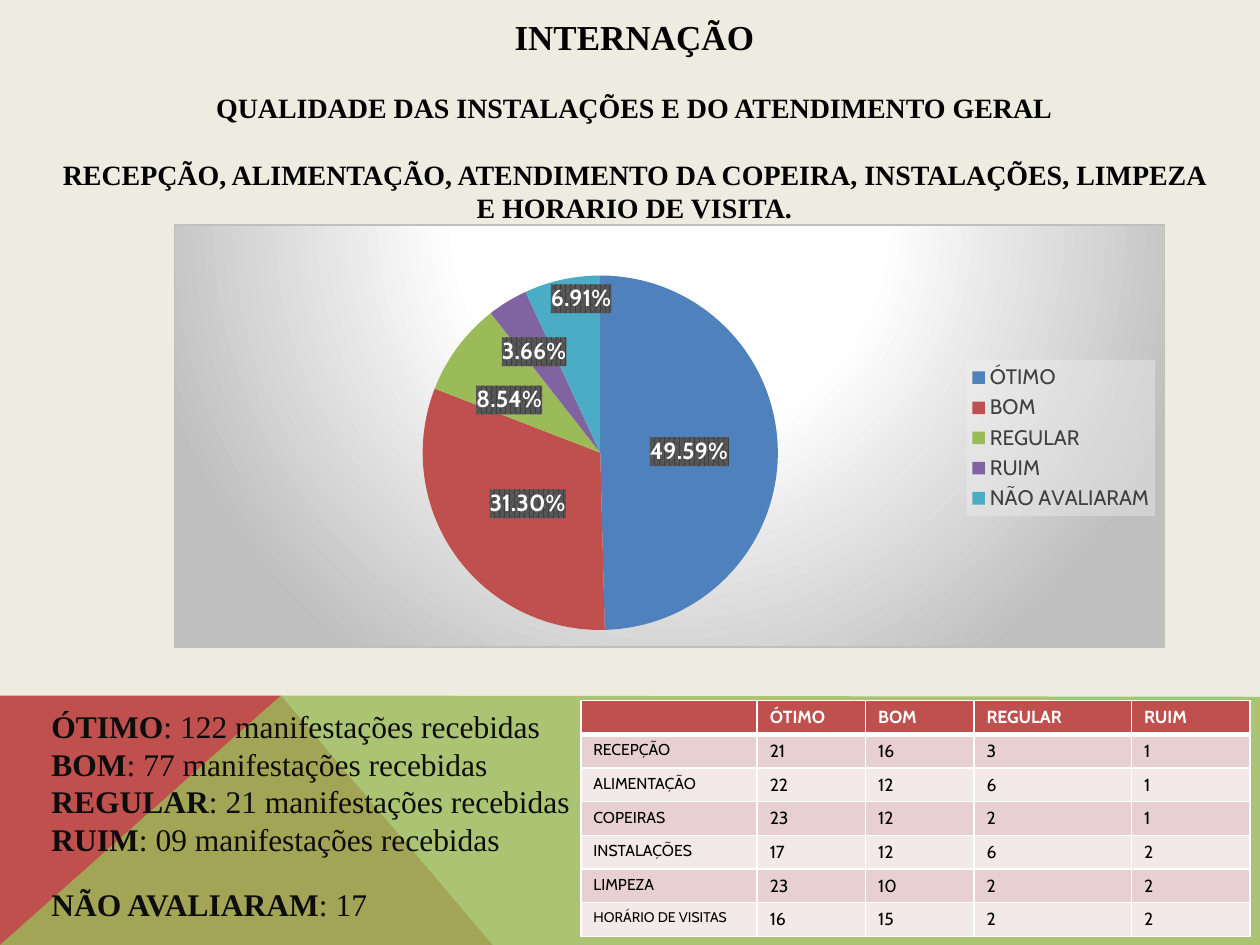
from copy import deepcopy
from dataclasses import dataclass

from pptx import Presentation, util as u
from pptx.chart.data import CategoryChartData
from pptx.dml.color import RGBColor
from pptx.enum import chart as ch, text as tx
from pptx.oxml import parse_xml
from pptx.oxml.ns import nsdecls, qn


@dataclass(frozen=True)
class Theme:
    back: str = "EEECE1"
    red: str = "C0504D"
    green: str = "9BBB59"
    black: str = "000000"
    ink: str = "0D0D0D"
    white: str = "FFFFFF"
    edge: str = "BFBFBF"
    key: str = "404040"
    pale: str = "F2F2F2"
    stripe: str = "595959"
    bands: tuple = ("F4E9E9", "E8D0D0")
    pie: tuple = ("4F81BD", "C0504D", "9BBB59", "8064A2", "4BACC6")
    serif: str = "Times New Roman"
    sans: str = "Cabin"
    title: float = 20
    head: float = 16
    body: float = 18
    cell: float = 10
    small: float = 9
    tiny: float = 8
    legend: float = 12
    label: float = 13.3


def tint(color, alpha=100):
    return f'<a:srgbClr val="{color}"><a:alpha val="{alpha * 1000}"/></a:srgbClr>'


def solid(color, alpha=100):
    return f"<a:solidFill>{tint(color, alpha)}</a:solidFill>"


def make(tag, inner):
    return parse_xml(f'<{tag} {nsdecls("a", "c")}>{inner}</{tag}>')


def layout(x, y, w=None, h=None, inner=False):
    parts = '<c:layoutTarget val="inner"/>' if inner else ""
    if w:
        parts += '<c:xMode val="edge"/><c:yMode val="edge"/>'
    for name, val in zip("xywh", (x, y, w, h)):
        if val is not None:
            parts += f'<c:{name} val="{val}"/>'
    return make("c:layout", f"<c:manualLayout>{parts}</c:manualLayout>")


class Deck:
    """Hold the style and the current slide, and draw each kind of element."""

    def __init__(self, theme):
        self.theme = theme
        self.file = Presentation()
        self.file.slide_width, self.file.slide_height = u.Inches(10), u.Inches(7.5)
        self.slide = self.file.slides.add_slide(self.file.slide_layouts[6])
        self.paint(self.slide.background.fill, theme.back)

    def paint(self, fill, color):
        fill.solid()
        fill.fore_color.rgb = RGBColor.from_string(color)

    def font(self, font, size, color, face, bold=False):
        font.size, font.name, font.bold = u.Pt(size), face, bold
        font.color.rgb = RGBColor.from_string(color)

    def run(self, para, words, *style):
        run = para.add_run()
        run.text = words
        self.font(run.font, *style)

    def shape(self, points, color, alpha=100):
        spots = [(u.Inches(x), u.Inches(y)) for x, y in points]
        pen = self.slide.shapes.build_freeform(*spots[0])
        pen.add_line_segments(spots[1:], close=True)
        shape = pen.convert_to_shape()
        shape.shadow.inherit = False
        shape.line.fill.background()
        self.paint(shape.fill, color)
        if alpha < 100:
            old = shape.element.spPr.find(qn("a:solidFill"))
            old.getparent().replace(old, make("a:solidFill", tint(color, alpha)))

    def text(self, box, lines, align=tx.PP_ALIGN.LEFT, pad=0.05):
        frame = self.slide.shapes.add_textbox(*map(u.Inches, box)).text_frame
        frame.word_wrap = True
        frame.margin_top = frame.margin_bottom = u.Inches(pad)
        for i, (gap, runs) in enumerate(lines):
            para = frame.add_paragraph() if i else frame.paragraphs[0]
            para.alignment, para.space_before = align, u.Pt(gap)
            for words, size, color, bold in runs:
                self.run(para, words, size, color, self.theme.serif, bold)

    def pie(self, box, shares, shifts):
        t = self.theme
        data = CategoryChartData(number_format="0.00")
        data.categories = list(shares)
        data.add_series("Series 1", list(shares.values()))
        chart = self.slide.shapes.add_chart(
            ch.XL_CHART_TYPE.PIE, *map(u.Inches, box), data).chart
        self.font(chart.font, t.cell, t.black, t.sans)
        chart.has_title = False
        chart.has_legend = True
        chart.legend.position = ch.XL_LEGEND_POSITION.RIGHT
        chart.legend.include_in_layout = False
        self.font(chart.legend.font, t.legend, t.key, t.sans)
        plot = chart.plots[0]
        plot.vary_by_categories = True
        for i, color in enumerate(t.pie):
            self.paint(plot.series[0].points[i].format.fill, color)
        self.label(plot.series[0].data_labels, chart.element, shifts)
        self.frame(chart.element)

    def label(self, labels, root, shifts):
        t = self.theme
        labels.show_value, labels.show_percentage = False, True
        labels.number_format, labels.number_format_is_linked = "0.00%", False
        labels.position = ch.XL_LABEL_POSITION.CENTER
        self.font(labels.font, t.label, t.white, t.sans, True)
        group = root.xpath(".//c:ser/c:dLbls")[0]
        group.find(qn("c:numFmt")).addnext(make(
            "c:spPr", f'<a:pattFill prst="pct75"><a:fgClr>{tint(t.key)}</a:fgClr>'
            f'<a:bgClr>{tint(t.stripe)}</a:bgClr></a:pattFill>'))
        parts = [part for part in group if part.tag != qn("c:showLeaderLines")]
        for spot, (i, shift) in enumerate(shifts.items()):
            item = make("c:dLbl", f'<c:idx val="{i}"/>')
            item.append(layout(*shift))
            item.extend([deepcopy(part) for part in parts])
            group.insert(spot, item)

    def frame(self, root):
        t = self.theme
        area, legend = root.xpath(".//c:plotArea")[0], root.xpath(".//c:legend")[0]
        for part in (area, legend):
            for old in part.findall(qn("c:layout")):
                part.remove(old)
        area.insert(0, layout(0.25, 0.12, 0.36, 0.84, True))
        legend.find(qn("c:legendPos")).addnext(layout(0.8, 0.32, 0.19, 0.37))
        legend.find(qn("c:txPr")).addprevious(make("c:spPr", solid(t.pale, 39)))
        stops = "".join(f'<a:gs pos="{pos * 1000}">{tint(color)}</a:gs>'
                        for pos, color in ((0, t.white), (39, t.white), (100, t.edge)))
        root.find(qn("c:chart")).addnext(make(
            "c:spPr", f'<a:gradFill><a:gsLst>{stops}</a:gsLst><a:path path="circle">'
            '<a:fillToRect l="50000" t="-80000" r="50000" b="180000"/></a:path></a:gradFill>'
            f'<a:ln w="{u.Pt(0.75)}">{solid(t.edge)}</a:ln>'))

    def table(self, box, widths, rows):
        t = self.theme
        grid = self.slide.shapes.add_table(len(rows), len(widths), *map(u.Inches, box)).table
        for col, width in zip(grid.columns, widths):
            col.width = u.Inches(width)
        for r, row in enumerate(rows):
            grid.rows[r].height = u.Inches(box[3] / len(rows))
            for c, words in enumerate(row):
                size = t.cell
                if r and not c:
                    size = t.tiny if r == len(rows) - 1 else t.small
                self.cell(grid.cell(r, c), words, size, r)

    def cell(self, cell, words, size, r):
        t = self.theme
        for side in "LRTB":
            thick = 3 if (r, side) in ((0, "B"), (1, "T")) else 1
            line = make(f"a:ln{side}", solid(t.white))
            line.set("w", str(u.Pt(thick)))
            cell._tc.get_or_add_tcPr().append(line)
        self.paint(cell.fill, t.bands[r % 2] if r else t.red)
        para = cell.text_frame.paragraphs[0]
        if words:
            self.run(para, words, size, t.black if r else t.white, t.sans, not r)
        else:
            end = make("a:endParaRPr", "")
            end.set("sz", str(size * 100))
            para._p.append(end)


def main():
    t = Theme()
    deck = Deck(t)
    deck.shape([(0, 7.5), (0, 5.52), (2.23, 5.52), (3.91, 7.5)], t.red)
    deck.shape([(0, 7.5), (2.23, 5.52), (10, 5.53), (10, 7.5)], t.green, 80)
    heads = [
        (0, t.title, "INTERNAÇÃO"),
        (19, t.head, "QUALIDADE DAS INSTALAÇÕES E DO ATENDIMENTO GERAL"),
        (19, t.head, "RECEPÇÃO, ALIMENTAÇÃO, ATENDIMENTO DA COPEIRA, INSTALAÇÕES, "
                     "LIMPEZA E HORARIO DE VISITA."),
    ]
    deck.text((0.31, 0.12, 9.45, 1.65),
              [(gap, [(words, size, t.black, True)]) for gap, size, words in heads],
              tx.PP_ALIGN.CENTER, 0)
    notes = [("ÓTIMO", "122", 0), ("BOM", "77", 0), ("REGULAR", "21", 0),
             ("RUIM", "09", 0), ("NÃO AVALIARAM", "17", 15.5)]
    tail = " manifestações recebidas"
    deck.text((0.31, 5.56, 4.45, 2.22),
              [(gap, [(name, t.body, t.ink, True),
                      (f": {count}{'' if gap else tail}", t.body, t.ink, False)])
               for name, count, gap in notes])
    shares = dict(zip([note[0] for note in notes], (49.59, 31.3, 8.54, 3.66, 6.91)))
    deck.pie((1.38, 1.78, 7.87, 3.36), shares,
             {2: (-0.02, 0), 3: (-0.02, -0.06), 4: (0, -0.16)})
    deck.table((4.61, 5.56, 5.31, 1.87), (1.4, 0.86, 0.86, 1.25, 0.94), [
        ("", "ÓTIMO", "BOM", "REGULAR", "RUIM"),
        ("RECEPÇÃO", "21", "16", "3", "1"),
        ("ALIMENTAÇÃO", "22", "12", "6", "1"),
        ("COPEIRAS", "23", "12", "2", "1"),
        ("INSTALAÇÕES", "17", "12", "6", "2"),
        ("LIMPEZA", "23", "10", "2", "2"),
        ("HORÁRIO DE VISITAS", "16", "15", "2", "2"),
    ])
    deck.file.save("out.pptx")


if __name__ == "__main__":
    main()
